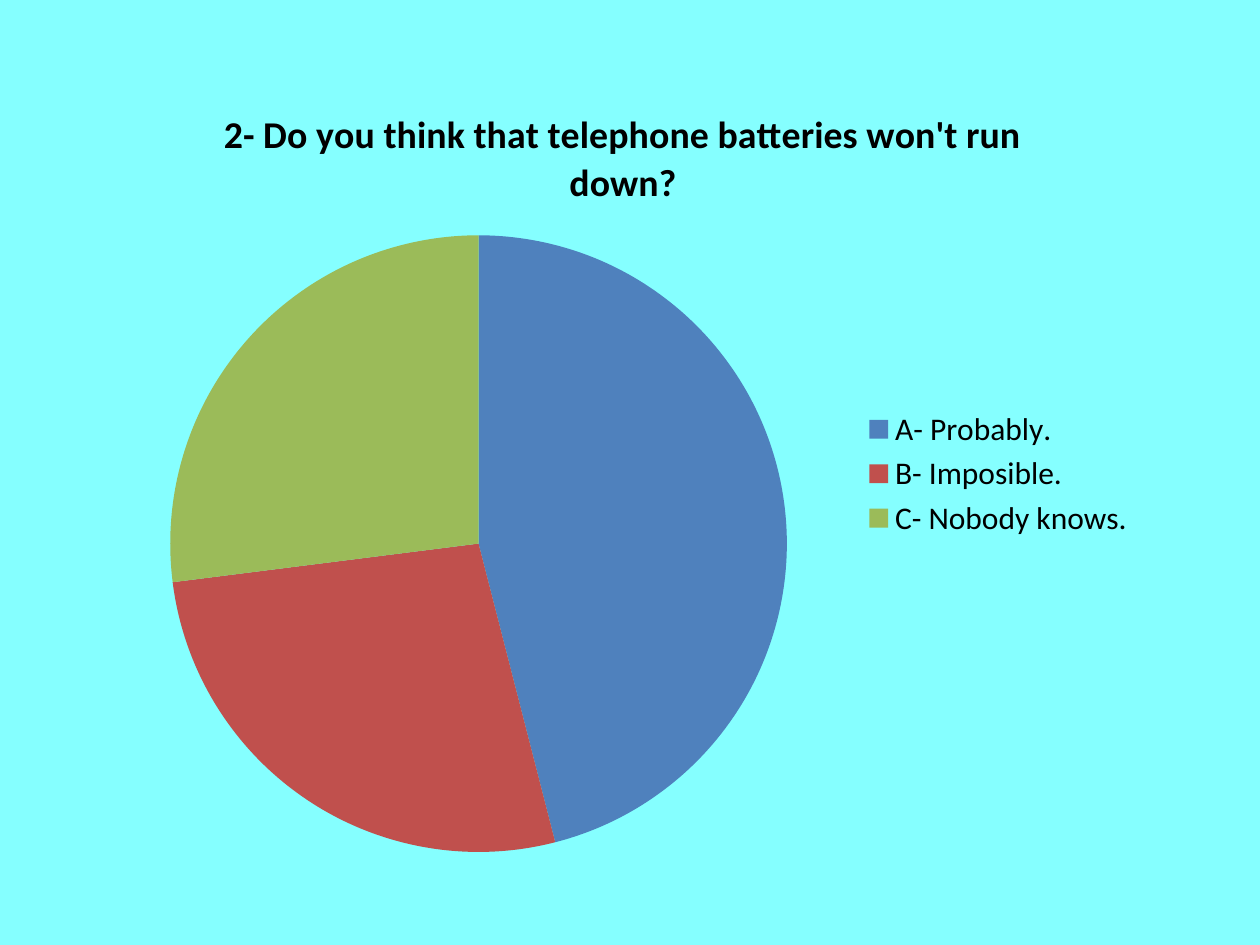
from pptx import Presentation
from pptx.chart.data import CategoryChartData
from pptx.dml.color import RGBColor
from pptx.enum.chart import XL_CHART_TYPE, XL_LEGEND_POSITION
from pptx.util import Inches, Pt


def color(value):
    return RGBColor.from_string(value)


class SurveySlide:
    text_format = {"name": "Calibri", "size": Pt(18), "bold": False}
    title_format = {"name": "Calibri", "size": Pt(21.6), "bold": True}
    text_color = "000000"

    def __init__(self, deck):
        self.page = deck.slides.add_slide(deck.slide_layouts[6])

    def background(self, fill_color):
        fill = self.page.background.fill
        fill.solid()
        fill.fore_color.rgb = color(fill_color)

    def style_font(self, font, format_values):
        for name, value in format_values.items():
            setattr(font, name, value)
        font.color.rgb = color(self.text_color)

    def pie(self, question, answers, left, top, width, height):
        data = CategoryChartData()
        data.categories = [label for label, _, _ in answers]
        data.add_series(question, [value for _, value, _ in answers])
        frame = self.page.shapes.add_chart(
            XL_CHART_TYPE.PIE, Inches(left), Inches(top),
            Inches(width), Inches(height), data)
        chart = frame.chart
        self.style_font(chart.font, self.text_format)

        chart.has_title = True
        title = chart.chart_title
        title.include_in_layout = False
        title.text_frame.text = question
        span = title.text_frame.paragraphs[0].runs[0]
        self.style_font(span.font, self.title_format)

        chart.has_legend = True
        chart.legend.position = XL_LEGEND_POSITION.RIGHT
        chart.legend.include_in_layout = False
        self.style_font(chart.legend.font, self.text_format)

        plot = chart.plots[0]
        plot.vary_by_categories = True
        for index, (_, _, slice_color) in enumerate(answers):
            fill = plot.series[0].points[index].format.fill
            fill.solid()
            fill.fore_color.rgb = color(slice_color)


def main():
    deck = Presentation()
    deck.slide_width = Inches(10)
    deck.slide_height = Inches(7.5)
    slide = SurveySlide(deck)
    slide.background("85FFFF")
    answers = [
        ("A- Probably.", 46, "4F81BD"),
        ("B- Imposible.", 27, "C0504D"),
        ("C- Nobody knows.", 27, "9BBB59"),
    ]
    slide.pie("2- Do you think that telephone batteries won't run down?",
              answers, 0.78, 0.62, 8.33, 6.28)
    deck.save("out.pptx")


if __name__ == "__main__":
    main()
